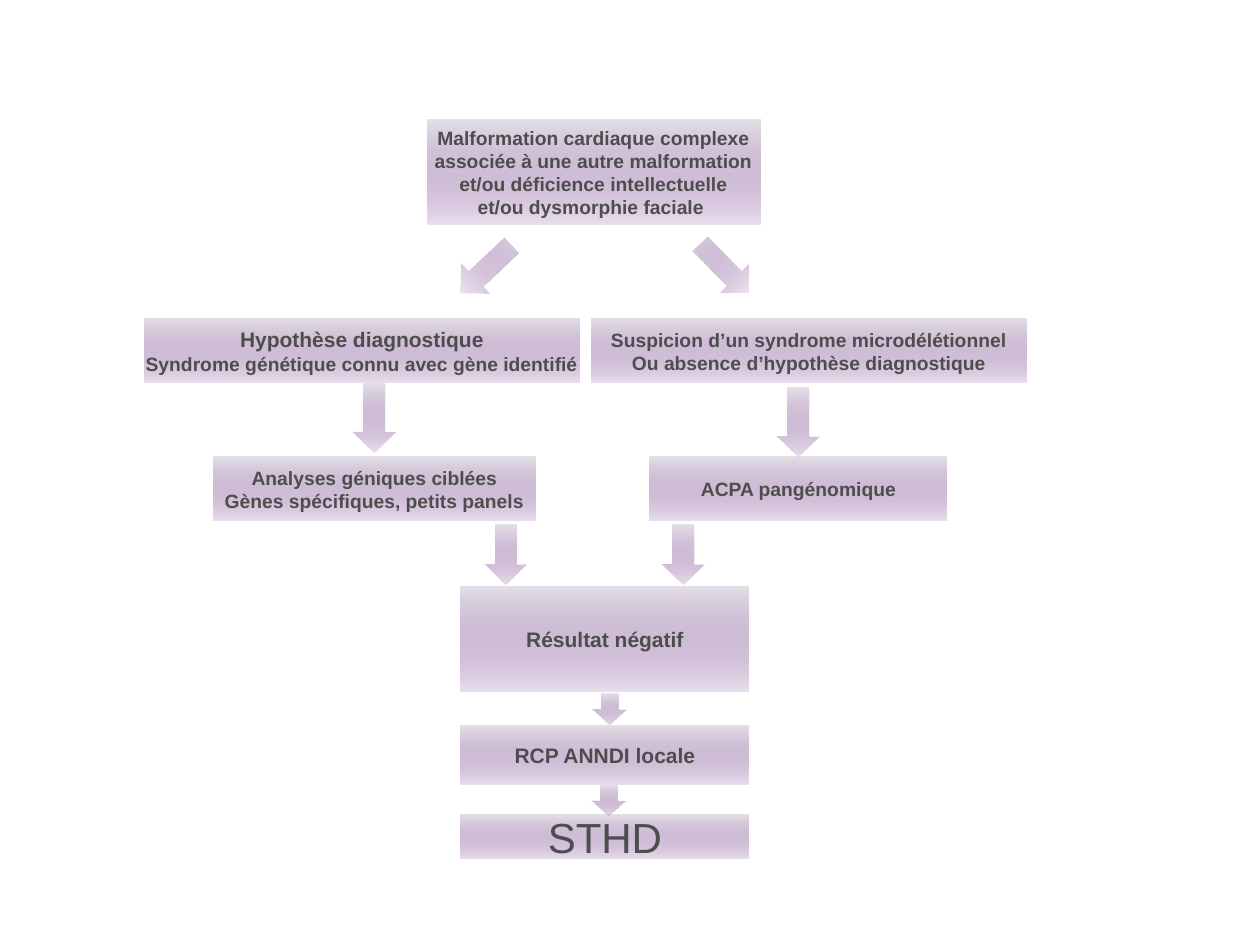
from lxml import etree
from pptx import Presentation
from pptx.dml.color import RGBColor
from pptx.enum.shapes import MSO_SHAPE
from pptx.enum.text import MSO_ANCHOR, PP_ALIGN
from pptx.oxml.ns import qn
from pptx.util import Pt

RECT, ARROW = MSO_SHAPE.RECTANGLE, MSO_SHAPE.DOWN_ARROW
MIDDLE, CENTER = MSO_ANCHOR.MIDDLE, PP_ALIGN.CENTER
PX = 914400 // 126
FONT, INK, PALE, PURPLE = "Arial", "4D4D4D", "E4E0E7", "733689"
ALPHA = "15000"

# left, top, width, height, lines of (text, size, bold)
BOXES = [
    (427, 120, 333, 105, [("Malformation cardiaque complexe", 11, True),
                          ("associée à une autre malformation", 11, True),
                          ("et/ou déficience intellectuelle", 11, True),
                          ("et/ou dysmorphie faciale ", 11, True)]),
    (144, 319, 436, 64, [("Hypothèse diagnostique", 12, True),
                         ("Syndrome génétique connu avec gène identifié", 11, True)]),
    (591, 319, 436, 64, [("Suspicion d’un syndrome microdélétionnel", 11, True),
                         ("Ou absence d’hypothèse diagnostique", 11, True)]),
    (650, 457, 297, 64, [("ACPA pangénomique", 11, True)]),
    (213, 457, 323, 64, [("Analyses géniques ciblées", 11, True),
                         ("Gènes spécifiques, petits panels", 11, True)]),
    (461, 587, 288, 105, [("Résultat négatif", 12, True)]),
    (461, 726, 288, 59, [("RCP ANNDI locale", 12, True)]),
    (461, 815, 288, 44, [("STHD", 24, False)]),
]
# left, top, width, height, rotation
ARROWS = [
    (703, 234, 42, 69, 315.2),
    (465, 234, 42, 69, 46.6),
    (777, 388, 42, 69, 0),
    (353, 383, 42, 69, 0),
    (662, 525, 42, 60, 0),
    (484, 525, 42, 60, 0),
    (592, 694, 34, 30, 0),
    (591, 786, 34, 30, 0),
]


def color(text):
    return RGBColor.from_string(text)


def add_shape(slide, kind, *rect):
    """Add a borderless shape that fades from pale to clear purple."""
    shape = slide.shapes.add_shape(kind, *(n * PX for n in rect))
    shape.shadow.inherit = False
    shape.line.fill.background()
    shape.fill.gradient()
    shape.fill.gradient_angle = 270
    for stop, tone in zip(shape.fill.gradient_stops, (PALE, PURPLE)):
        stop.color.rgb = color(tone)
    last = shape._element.spPr.findall(".//" + qn("a:srgbClr"))[-1]
    etree.SubElement(last, qn("a:alpha")).set("val", ALPHA)
    return shape


def write(shape, lines):
    frame = shape.text_frame
    frame.word_wrap = False
    frame.vertical_anchor = MIDDLE
    for i, (text, size, bold) in enumerate(lines):
        para = frame.add_paragraph() if i else frame.paragraphs[0]
        para.alignment = CENTER
        run = para.add_run()
        run.text = text
        font = run.font
        font.name, font.size, font.bold = FONT, Pt(size), bold
        font.color.rgb = color(INK)


def main():
    deck = Presentation()
    deck.slide_width, deck.slide_height = 1260 * PX, 945 * PX
    slide = deck.slides.add_slide(deck.slide_layouts[6])
    for *rect, lines in BOXES:
        write(add_shape(slide, RECT, *rect), lines)
    for *rect, turn in ARROWS:
        add_shape(slide, ARROW, *rect).rotation = turn
    deck.save("out.pptx")


if __name__ == "__main__":
    main()
